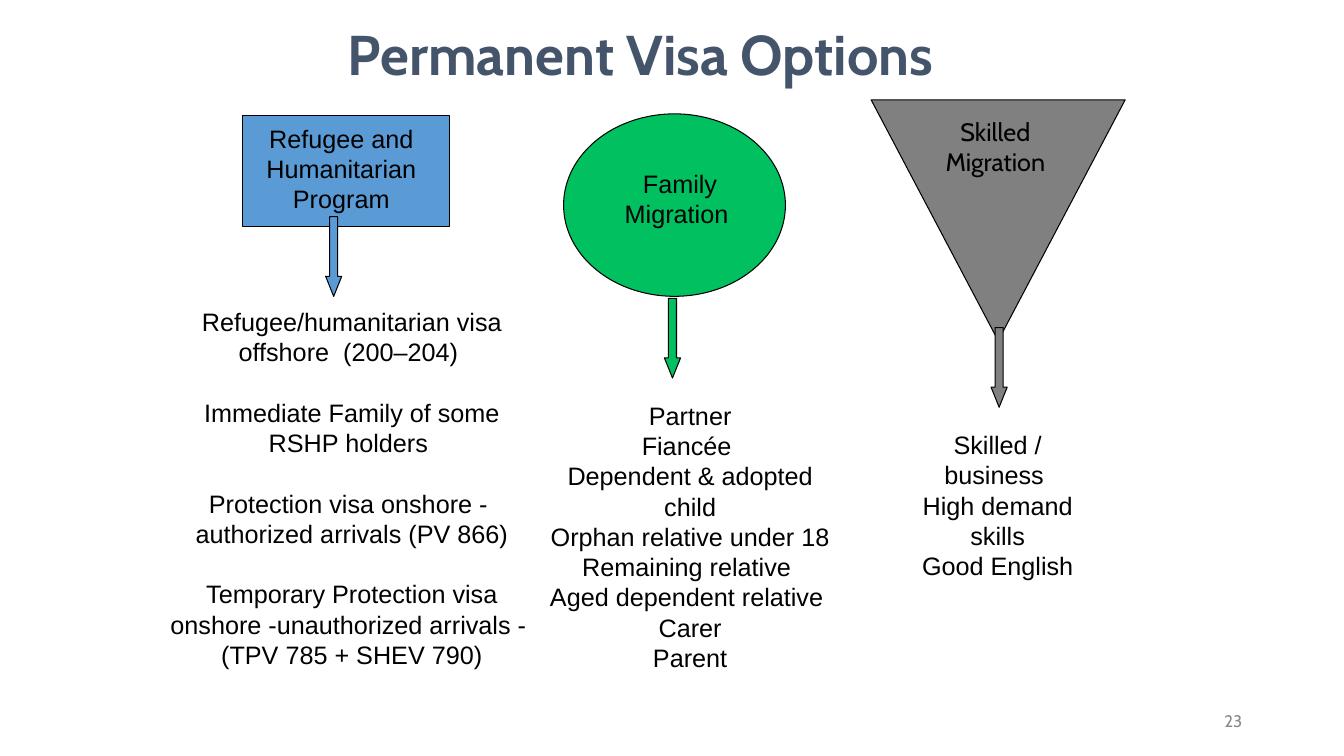
from dataclasses import dataclass

from pptx import Presentation
from pptx import util as u
from pptx.dml.color import RGBColor
from pptx.enum import shapes, text
from pptx.oxml.ns import qn

FORM = shapes.MSO_SHAPE


@dataclass(frozen=True)
class Theme:
    ink: str = "000000"
    title: str = "44546A"
    blue: str = "5B9BD5"
    green: str = "00C060"
    gray: str = "808080"
    note: str = "898989"
    sans: str = "Arial"
    brand: str = "Cabin"
    head: float = 40
    gap: float = 32
    body: float = 18
    small: float = 12
    pitch: float = 21.6
    edge: float = 0.75


THEME = Theme()

REFUGE = [
    "Refugee/humanitarian visa offshore  (200–204) ",
    "Immediate Family of some RSHP holders ",
    "Protection visa onshore -  authorized arrivals (PV 866)",
    "Temporary Protection visa onshore -unauthorized arrivals -  (TPV 785 + SHEV 790)",
]
FAMILY = [
    "Partner",
    "Fiancée ",
    "Dependent & adopted child",
    "Orphan relative under 18",
    "Remaining relative ",
    "Aged dependent relative ",
    "Carer",
    "Parent",
]
SKILLED = ["Skilled / business ", "High demand skills", "Good English"]


def place(item, box):
    item.left, item.top, item.width, item.height = map(u.Inches, box)


def style(run, size, font, color, bold=False):
    run.font.size = u.Pt(size)
    run.font.name = font
    run.font.bold = bold
    run.font.color.rgb = RGBColor.from_string(color)


def write(item, lines, size=THEME.body, font=THEME.sans, color=THEME.ink,
          bold=False, align=text.PP_ALIGN.CENTER, anchor=text.MSO_ANCHOR.TOP,
          pitch=THEME.pitch, after=0):
    """Fill the item with one plain paragraph per line, without bullets."""
    frame = item.text_frame
    frame.word_wrap = True
    frame.auto_size = text.MSO_AUTO_SIZE.NONE
    frame.vertical_anchor = anchor
    for i, line in enumerate(lines):
        para = frame.add_paragraph() if i else frame.paragraphs[0]
        para.alignment = align
        para.line_spacing = u.Pt(pitch) if pitch else 1.0
        para.space_before = u.Pt(0)
        para.space_after = u.Pt(after)
        props = para._p.get_or_add_pPr()
        props.set("marL", "0")
        props.set("indent", "0")
        props.append(props.makeelement(qn("a:buNone"), {}))
        run = para.add_run()
        run.text = line
        style(run, size, font, color, bold)


def label(slide, box, lines, **form):
    item = slide.shapes.add_textbox(*map(u.Inches, box))
    write(item, lines, **form)


def fill_list(slide, index, box, lines, **form):
    item = slide.placeholders[index]
    place(item, box)
    write(item, lines, **form)


def shape(slide, kind, box, color):
    item = slide.shapes.add_shape(kind, *map(u.Inches, box))
    item.shadow.inherit = False
    item.fill.solid()
    item.fill.fore_color.rgb = RGBColor.from_string(color)
    item.line.color.rgb = RGBColor.from_string(THEME.ink)
    item.line.width = u.Pt(THEME.edge)
    return item


def arrow(slide, left, top, color):
    item = shape(slide, FORM.DOWN_ARROW, (left, top, 0.16, 0.79), color)
    item.adjustments[1] = 1.244


def title(slide, line):
    item = slide.shapes.title
    place(item, (2.27, -0.6, 8.27, 2.26))
    write(item, [line], size=THEME.head, font=THEME.brand, color=THEME.title,
          bold=True, anchor=text.MSO_ANCHOR.MIDDLE, pitch=None)
    space = item.text_frame.paragraphs[0].add_run()
    space.text = " "
    style(space, THEME.gap, THEME.brand, THEME.title, True)


def main():
    deck = Presentation()
    deck.slide_width, deck.slide_height = u.Inches(13.33), u.Inches(7.5)
    slide = deck.slides.add_slide(deck.slide_layouts.get_by_name("Comparison"))
    spare = slide.placeholders[4].element
    spare.getparent().remove(spare)

    title(slide, "Permanent Visa Options")

    shape(slide, FORM.RECTANGLE, (2.41, 1.15, 2.05, 1.1), THEME.blue)
    label(slide, (2.36, 1.17, 2.05, 1.01), ["Refugee and Humanitarian Program"])
    arrow(slide, 3.23, 2.15, THEME.blue)
    fill_list(slide, 1, (1.56, 2.99, 3.86, 4.34), REFUGE, after=THEME.pitch)

    shape(slide, FORM.OVAL, (5.59, 1.13, 2.2, 1.81), THEME.green)
    label(slide, (5.96, 1.62, 1.57, 1), ["Family Migration "])
    arrow(slide, 6.59, 2.96, THEME.green)
    fill_list(slide, 2, (5.31, 3.92, 3.07, 2.8), FAMILY)

    wedge = shape(slide, FORM.ISOSCELES_TRIANGLE, (8.64, 0.99, 2.52, 2.39), THEME.gray)
    wedge.rotation = 180
    label(slide, (8.64, 1.1, 2.52, 0.7), ["Skilled ", "Migration "], font=THEME.brand)
    arrow(slide, 9.83, 3.25, THEME.gray)
    fill_list(slide, 3, (9.03, 4.21, 1.73, 1.92), SKILLED)

    label(slide, (9.42, 6.95, 3, 0.4), ["23"], size=THEME.small, font=THEME.brand,
          color=THEME.note, align=text.PP_ALIGN.RIGHT,
          anchor=text.MSO_ANCHOR.MIDDLE, pitch=None)

    deck.save("out.pptx")


if __name__ == "__main__":
    main()
